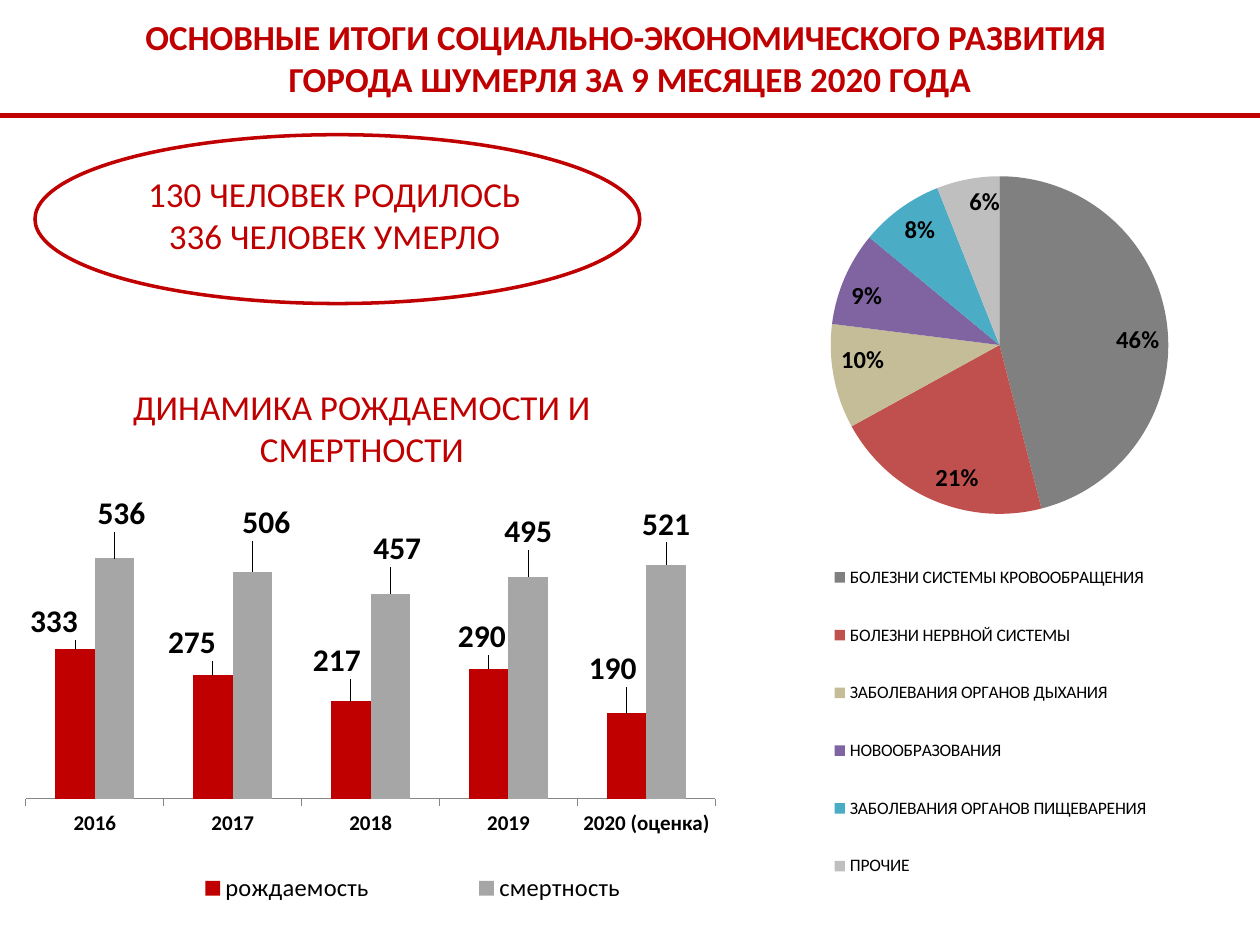
"""Build the slide on births, deaths and causes of death in Shumerlya."""
from lxml import etree
from pptx import Presentation
from pptx.chart.data import CategoryChartData
from pptx.dml.color import RGBColor
from pptx.enum.chart import XL_CHART_TYPE, XL_LABEL_POSITION, XL_LEGEND_POSITION, XL_TICK_LABEL_POSITION, XL_TICK_MARK
from pptx.enum.shapes import MSO_CONNECTOR, MSO_SHAPE
from pptx.enum.text import MSO_ANCHOR, MSO_AUTO_SIZE, PP_ALIGN
from pptx.oxml.ns import qn
from pptx.util import Pt

COLUMN, PIE = XL_CHART_TYPE.COLUMN_CLUSTERED, XL_CHART_TYPE.PIE
OUTSIDE_END, INSIDE_END = XL_LABEL_POSITION.OUTSIDE_END, XL_LABEL_POSITION.INSIDE_END
LEGEND_RIGHT = XL_LEGEND_POSITION.RIGHT
TICK_NONE, TICK_OUTSIDE = XL_TICK_MARK.NONE, XL_TICK_MARK.OUTSIDE
LABELS_LOW = XL_TICK_LABEL_POSITION.LOW
STRAIGHT, ELLIPSE = MSO_CONNECTOR.STRAIGHT, MSO_SHAPE.OVAL
MIDDLE, CENTER, NO_AUTOFIT = MSO_ANCHOR.MIDDLE, PP_ALIGN.CENTER, MSO_AUTO_SIZE.NONE

THEME = {
    "font": "Calibri",
    "red": RGBColor.from_string("C00000"),
    "black": RGBColor.from_string("000000"),
    "axis": RGBColor.from_string("868686"),
    "deaths": RGBColor.from_string("A6A6A6"),
    "causes": ["808080", "C0504D", "C4BD97", "8064A2", "4BACC6", "BFBFBF"],
    "heading": Pt(20),
    "value": Pt(18),
    "legend": Pt(14),
    "share": Pt(14),
    "category": Pt(12),
    "chart": Pt(10),
}


def format_font(font, size, color, bold=False):
    values = {"name": THEME["font"], "size": THEME[size], "bold": bold}
    for name, value in values.items():
        setattr(font, name, value)
    font.color.rgb = THEME[color]


def set_layout(parent, index, **values):
    for old_layout in parent.findall(qn("c:layout")):
        parent.remove(old_layout)
    layout = etree.Element(qn("c:layout"))
    manual = etree.SubElement(layout, qn("c:manualLayout"))
    for name, value in values.items():
        etree.SubElement(manual, qn(f"c:{name}")).set("val", str(value))
    parent.insert(index, layout)


presentation = Presentation()
presentation.slide_width, presentation.slide_height = Pt(720), Pt(540)
slide = presentation.slides.add_slide(presentation.slide_layouts[5])
shapes = slide.shapes

title = shapes.title
title_bounds = {"left": 0, "top": 0, "width": Pt(720), "height": Pt(66)}
for name, value in title_bounds.items():
    setattr(title, name, value)
dynamics_heading = shapes.add_textbox(Pt(14.4), Pt(213), Pt(385), Pt(63))
totals = shapes.add_textbox(Pt(36.7), Pt(94.3), Pt(309), Pt(57))

texts = [
    (title, True, ["ОСНОВНЫЕ ИТОГИ СОЦИАЛЬНО-ЭКОНОМИЧЕСКОГО РАЗВИТИЯ ",
                   "ГОРОДА ШУМЕРЛЯ ЗА 9 МЕСЯЦЕВ 2020 ГОДА"]),
    (dynamics_heading, False, ["ДИНАМИКА РОЖДАЕМОСТИ И СМЕРТНОСТИ"]),
    (totals, False, ["130 ЧЕЛОВЕК РОДИЛОСЬ", "336 ЧЕЛОВЕК УМЕРЛО"]),
]
frame_format = {"word_wrap": True, "auto_size": NO_AUTOFIT, "vertical_anchor": MIDDLE}
for shape, bold, lines in texts:
    frame = shape.text_frame
    for name, value in frame_format.items():
        setattr(frame, name, value)
    frame.text = "\n".join(lines)
    for paragraph in frame.paragraphs:
        paragraph.alignment = CENTER
        format_font(paragraph.runs[0].font, "heading", "red", bold)

rule = shapes.add_connector(STRAIGHT, Pt(0), Pt(66), Pt(720), Pt(66))
rule.line.color.rgb = THEME["red"]
rule.line.width = Pt(2.5)
etree.SubElement(rule._element.spPr, qn("a:effectLst"))

ellipse = shapes.add_shape(ELLIPSE, Pt(20), Pt(77), Pt(345.6), Pt(96.5))
ellipse.shadow.inherit = False
ellipse.fill.background()
ellipse.line.color.rgb = THEME["red"]
ellipse.line.width = Pt(2)

population_data = CategoryChartData()
population_data.categories = ["2016", "2017", "2018", "2019", "2020 (оценка)"]
population_data.add_series("рождаемость", [333, 275, 217, 290, 190])
population_data.add_series("смертность", [536, 506, 457, 495, 521])
population_chart = shapes.add_chart(
    COLUMN, Pt(14.4), Pt(275.8), Pt(402.5), Pt(244), population_data).chart

causes_data = CategoryChartData()
causes_data.categories = [
    "БОЛЕЗНИ СИСТЕМЫ КРОВООБРАЩЕНИЯ", "БОЛЕЗНИ НЕРВНОЙ СИСТЕМЫ", "ЗАБОЛЕВАНИЯ ОРГАНОВ ДЫХАНИЯ",
    "НОВООБРАЗОВАНИЯ", "ЗАБОЛЕВАНИЯ ОРГАНОВ ПИЩЕВАРЕНИЯ", "ПРОЧИЕ",
]
causes_data.add_series("Series 1", [46, 21, 10, 9, 8, 6])
causes_chart = shapes.add_chart(
    PIE, Pt(433.4), Pt(82.8), Pt(265), Pt(448.6), causes_data).chart

charts = [
    (population_chart, "legend", {"x": 0, "y": 0.11, "w": 0.98, "h": 0.63},
     {"x": 0.11, "y": 0.9, "w": 0.88, "h": 0.1}),
    (causes_chart, "chart", {"x": 0.15, "y": 0.04, "w": 0.74, "h": 0.43},
     {"x": 0, "y": 0.49, "w": 1, "h": 0.49}),
]
for chart, legend_size, plot_box, legend_box in charts:
    format_font(chart.font, "chart", "black")
    chart.has_title = False
    chart.has_legend = True
    chart.legend.position = LEGEND_RIGHT
    chart.legend.include_in_layout = False
    format_font(chart.legend.font, legend_size, "black")
    plot_area = chart._chartSpace.chart.plotArea
    set_layout(plot_area, 0, layoutTarget="inner", xMode="edge", yMode="edge", **plot_box)
    set_layout(chart.legend._element, 1, xMode="edge", yMode="edge", **legend_box)

years_axis = population_chart.category_axis
axis_format = {"major_tick_mark": TICK_OUTSIDE, "minor_tick_mark": TICK_NONE,
               "tick_label_position": LABELS_LOW, "has_major_gridlines": False}
for name, value in axis_format.items():
    setattr(years_axis, name, value)
years_axis.format.line.color.rgb = THEME["axis"]
format_font(years_axis.tick_labels.font, "category", "black", True)

count_axis = population_chart.value_axis
axis_format = {"minimum_scale": 0, "maximum_scale": 600, "visible": False, "has_major_gridlines": False}
for name, value in axis_format.items():
    setattr(count_axis, name, value)

columns = population_chart.plots[0]
plot_format = {"gap_width": 150, "overlap": 0, "vary_by_categories": False}
for name, value in plot_format.items():
    setattr(columns, name, value)
label_offsets = [
    ("red", [(-0.03, -0.01), (-0.03, -0.02), (-0.02, -0.04), (-0.01, -0.02), (-0.02, -0.05)]),
    ("deaths", [(0.01, -0.05), (0.02, -0.06), (0.01, -0.05), (0, -0.05), (0, -0.04)]),
]
for series, (color, offsets) in zip(columns.series, label_offsets):
    series.format.fill.solid()
    series.format.fill.fore_color.rgb = THEME[color]
    series.data_labels.show_value = True
    series.data_labels.position = OUTSIDE_END
    format_font(series.data_labels.font, "value", "black", True)
    for index, (x, y) in enumerate(offsets):
        label = series.points[index].data_label
        format_font(label.font, "value", "black", True)
        label.position = OUTSIDE_END
        set_layout(series.data_labels._element.findall(qn("c:dLbl"))[index], 1, x=x, y=y)

pie = causes_chart.plots[0]
pie.vary_by_categories = True
for index, color in enumerate(THEME["causes"]):
    fill = pie.series[0].points[index].format.fill
    fill.solid()
    fill.fore_color.rgb = RGBColor.from_string(color)
share_labels = pie.series[0].data_labels
label_format = {"show_value": False, "show_percentage": True, "position": INSIDE_END,
                "number_format": "0%", "number_format_is_linked": False}
for name, value in label_format.items():
    setattr(share_labels, name, value)
format_font(share_labels.font, "share", "black", True)

presentation.save("out.pptx")
